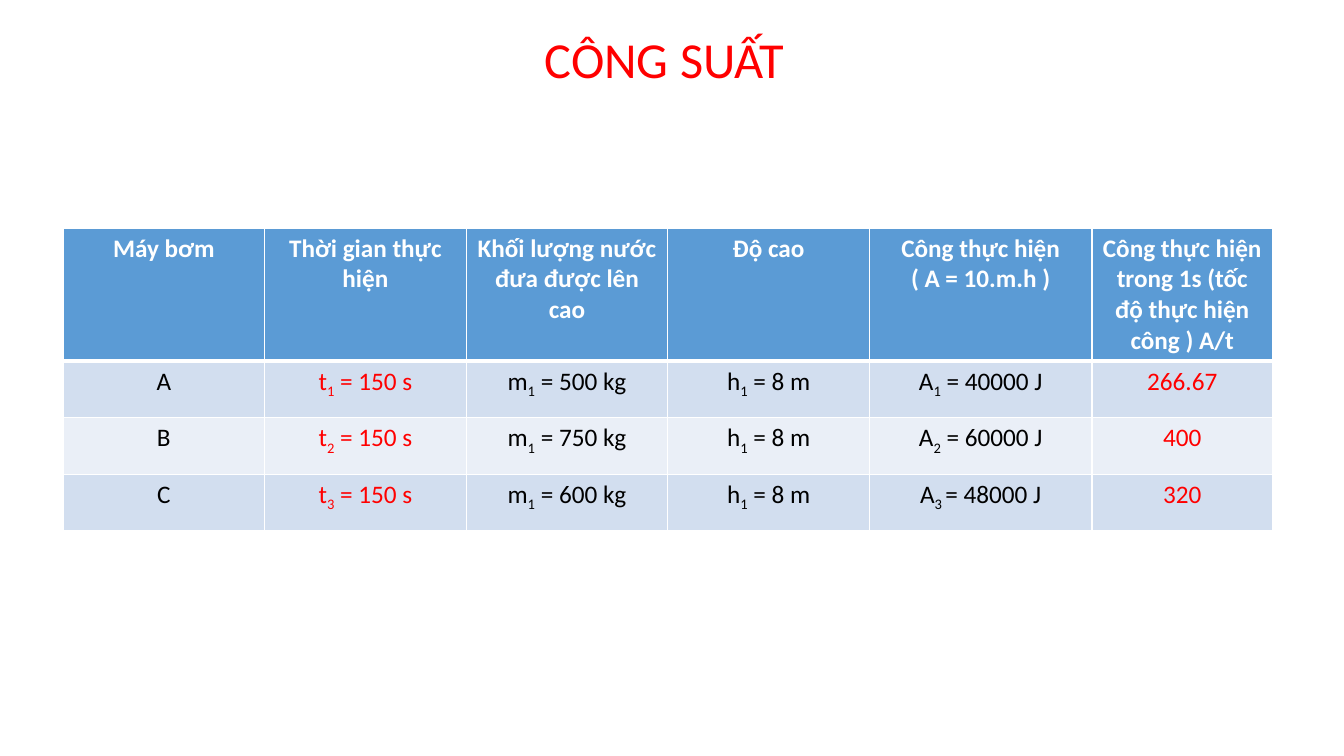
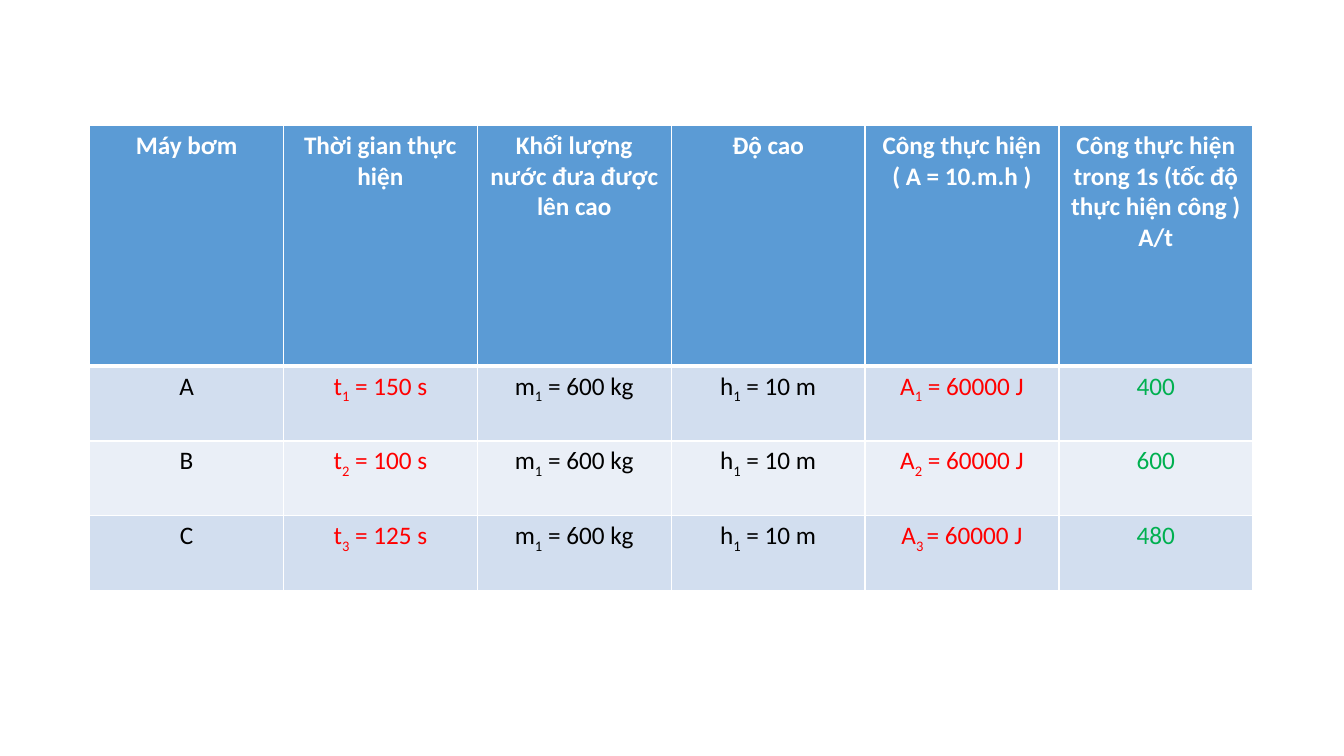
from dataclasses import dataclass

from lxml import etree
from pptx import Presentation
from pptx.dml.color import RGBColor
from pptx.enum import text
from pptx.oxml import ns
from pptx.util import Pt


@dataclass(frozen=True)
class Theme:
    font: str = "Calibri"
    title_size: float = 36
    cell_size: float = 18
    white: str = "FFFFFF"
    black: str = "000000"
    red: str = "FF0000"
    green: str = "00B050"
    header: str = "5B9BD5"
    bands: tuple = ("D2DEEF", "EAEFF7")
    border: float = 1
    header_border: float = 3


THEME = Theme()

HEADERS = [
    "Máy bơm",
    "Thời gian thực hiện",
    "Khối lượng nước đưa được lên cao",
    "Độ cao",
    "Công thực hiện\n( A = 10.m.h )",
    "Công thực hiện trong 1s (tốc độ thực hiện công ) A/t",
]


class Deck:
    """Holds the style and the current slide."""

    def __init__(self, theme):
        self.theme = theme
        self.prs = Presentation()
        self.prs.slide_width, self.prs.slide_height = Pt(960), Pt(540)
        self.s = None

    def new_slide(self):
        self.s = self.prs.slides.add_slide(self.prs.slide_layouts[6])

    def fill_paragraph(self, p, content, size, color, bold=False):
        """Fill a paragraph; text between underscores is set as a subscript."""
        for i, part in enumerate(content.split("_")):
            r = p.add_run()
            r.text = part
            if i % 2:
                r._r.get_or_add_rPr().set("baseline", "-25000")
        f = p.font
        f.name, f.size, f.bold = self.theme.font, Pt(size), bold
        f.color.rgb = RGBColor.from_string(color)

    def title(self, content, left, top, width, height):
        sp = self.s.shapes.add_textbox(Pt(left), Pt(top), Pt(width), Pt(height))
        tf = sp.text_frame
        tf.word_wrap = True
        tf.auto_size = text.MSO_AUTO_SIZE.SHAPE_TO_FIT_TEXT
        self.fill_paragraph(tf.paragraphs[0], content, self.theme.title_size, self.theme.red)

    def borders(self, cell, top, bottom):
        t = self.theme
        widths = {"lnL": t.border, "lnR": t.border, "lnT": top, "lnB": bottom}
        for tag, width in widths.items():
            ln = etree.SubElement(cell._tc.get_or_add_tcPr(), ns.qn("a:" + tag), w=str(Pt(width)))
            fill = etree.SubElement(ln, ns.qn("a:solidFill"))
            etree.SubElement(fill, ns.qn("a:srgbClr"), val=t.white)

    def cell(self, cell, content, color, fill, bold, top, bottom):
        # Borders come before the fill in the cell properties
        self.borders(cell, top, bottom)
        cell.fill.solid()
        cell.fill.fore_color.rgb = RGBColor.from_string(fill)
        tf = cell.text_frame
        for i, line in enumerate(content.split("\n")):
            p = tf.add_paragraph() if i else tf.paragraphs[0]
            p.alignment = text.PP_ALIGN.CENTER
            self.fill_paragraph(p, line, self.theme.cell_size, color, bold)

    def table(self, left, top, widths, header_height, row_height, rows, colors):
        t = self.theme
        heights = [header_height] + [row_height] * len(rows)
        tbl = self.s.shapes.add_table(
            len(heights), len(widths), Pt(left), Pt(top), Pt(sum(widths)), Pt(sum(heights))
        ).table
        for col, width in zip(tbl.columns, widths):
            col.width = Pt(width)
        for row, height in zip(tbl.rows, heights):
            row.height = Pt(height)

        # Header row, then banded body rows
        for j, content in enumerate(HEADERS):
            self.cell(tbl.cell(0, j), content, t.white, t.header, True, t.border, t.header_border)
        for i, row in enumerate(rows):
            above = t.border if i else t.header_border
            for j, (content, color) in enumerate(zip(row, colors)):
                self.cell(tbl.cell(i + 1, j), content, color, t.bands[i % 2], False, above, t.border)


def pump_rows(times, masses, height, works, rates):
    """One row per pump: name, time, mass, height, work and work per second."""
    # The third work label has its space inside the subscript
    gaps = ["_ ", "_ ", " _"]
    return [
        [name, f"t_{n}_ = {time} s", f"m_1_ = {mass} kg", f"h_1_ = {height} m",
         f"A_{n}{gap}= {work} J", rate]
        for n, (name, time, mass, gap, work, rate)
        in enumerate(zip("ABC", times, masses, gaps, works, rates), 1)
    ]


def main():
    t = THEME
    deck = Deck(t)

    # Slide 1: pumps running for equal times
    deck.new_slide()
    deck.table(
        45, 163, [144] * 4 + [159, 129], 92, 40.3,
        pump_rows([150] * 3, [500, 750, 600], 8, [40000, 60000, 48000], ["266.67", "400", "320"]),
        [t.black, t.red, t.black, t.black, t.black, t.red],
    )
    deck.title("CÔNG SUẤT", 382, 16.5, 199, 51)

    # Slide 2: pumps doing equal work
    deck.new_slide()
    deck.table(
        64, 89.5, [138.5] * 6, 172, 53.5,
        pump_rows([150, 100, 125], [600] * 3, 10, [60000] * 3, ["400", "600", "480"]),
        [t.black, t.red, t.black, t.black, t.red, t.green],
    )

    deck.prs.save("out.pptx")


if __name__ == "__main__":
    main()
